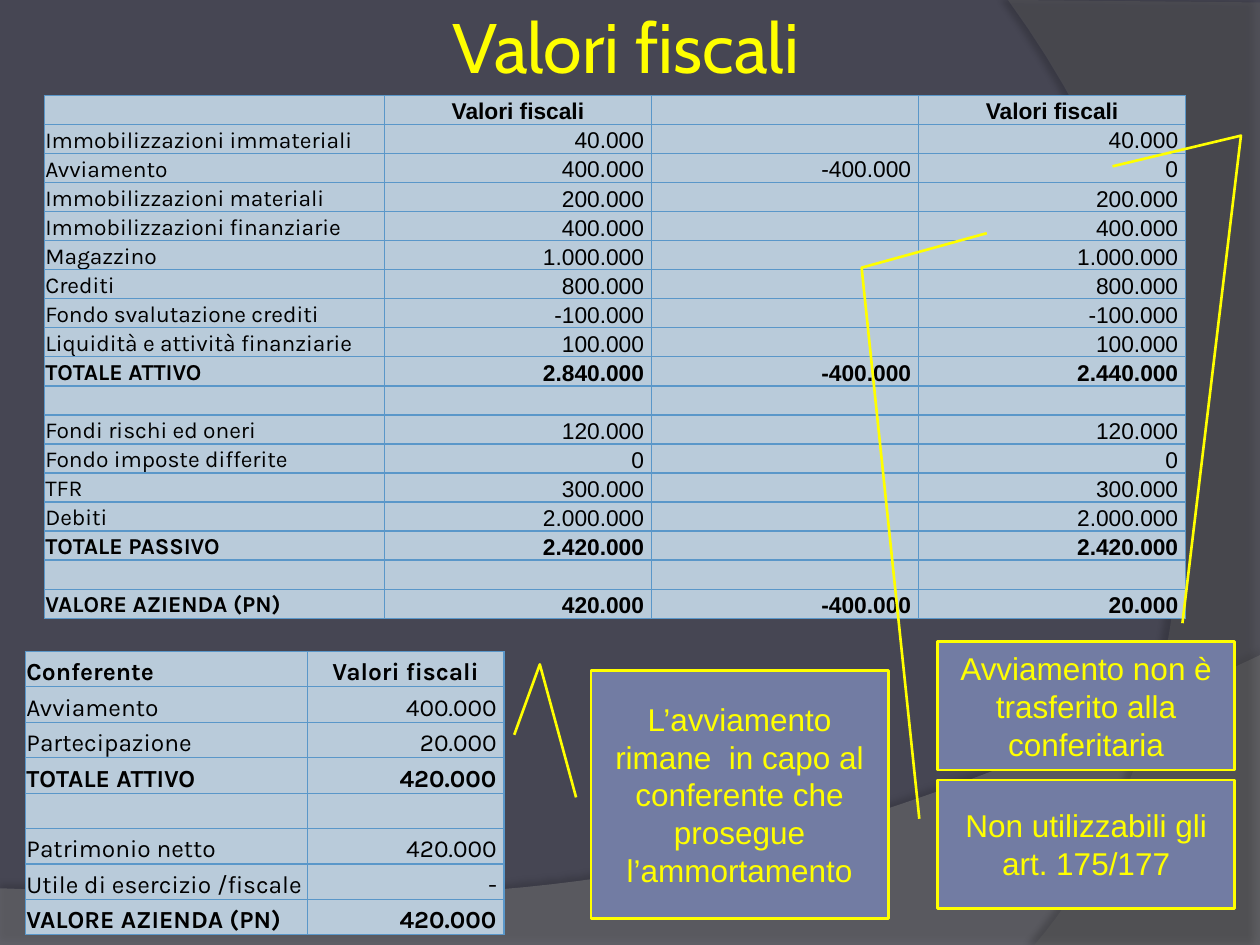
"""Build the slide on tax values of a business contribution."""
import collections

import lxml.etree
import pptx
import pptx.dml.color
import pptx.enum.shapes
import pptx.enum.text
import pptx.oxml
import pptx.oxml.ns
import pptx.util

Inches = pptx.util.Inches
Align = pptx.enum.text.PP_ALIGN
Anchor = pptx.enum.text.MSO_ANCHOR
Box = collections.namedtuple("Box", "left top width height")

YELLOW, BLACK, PANEL, CELL, RULE = "FFFF00", "000000", "727CA3", "B9CBDA", "5A97C9"
NAMESPACE = 'xmlns:a="http://schemas.openxmlformats.org/drawingml/2006/main"'

BALANCE = [
    ("", "Valori fiscali", "", "Valori fiscali"),
    ("Immobilizzazioni immateriali", "40.000 ", "", "40.000 "),
    ("Avviamento", "400.000 ", "-400.000 ", "0 "),
    ("Immobilizzazioni materiali", "200.000 ", "", "200.000 "),
    ("Immobilizzazioni finanziarie", "400.000 ", "", "400.000 "),
    ("Magazzino", "1.000.000 ", "", "1.000.000 "),
    ("Crediti", "800.000 ", "", "800.000 "),
    ("Fondo svalutazione crediti", "-100.000 ", "", "-100.000 "),
    ("Liquidità e attività finanziarie", "100.000 ", "", "100.000 "),
    ("TOTALE ATTIVO", "2.840.000 ", "-400.000 ", "2.440.000 "),
    ("", "", "", ""),
    ("Fondi rischi ed oneri", "120.000 ", "", "120.000 "),
    ("Fondo imposte differite", "0 ", "", "0 "),
    ("TFR", "300.000 ", "", "300.000 "),
    ("Debiti", "2.000.000 ", "", "2.000.000 "),
    ("TOTALE PASSIVO", "2.420.000 ", "", "2.420.000 "),
    ("", "", "", ""),
    ("VALORE AZIENDA (PN)", "420.000 ", "-400.000 ", "20.000 "),
]
CONTRIBUTOR = [
    ("Conferente", "Valori fiscali"),
    ("Avviamento", " 400.000 "),
    ("Partecipazione", "20.000 "),
    ("TOTALE ATTIVO", " 420.000 "),
    ("", ""),
    ("Patrimonio netto", "420.000 "),
    ("Utile di esercizio /fiscale", " - "),
    ("VALORE AZIENDA (PN)", "420.000 "),
]
CALLOUTS = [
    (Box(4.69, 5.32, 2.36, 1.97), (0.512, -0.05, -0.024, -0.172, 0.26, -0.258),
     "L’avviamento rimane  in capo al conferente che prosegue l’ammortamento"),
    (Box(7.44, 6.19, 2.36, 1.02), (0.302, -0.061, -3.986, -0.255, -4.254, 0.166),
     "Non utilizzabili gli art. 175/177"),
    (Box(7.44, 5.09, 2.36, 1.02), (-0.142, 0.824, -3.935, 1.021, -3.696, 0.589),
     "Avviamento non è trasferito alla conferitaria"),
]


def color(value):
    """Turn a hex string into a colour."""
    return pptx.dml.color.RGBColor.from_string(value)


def paint(target, value):
    """Fill a shape, cell or background with a solid colour."""
    target.fill.solid()
    target.fill.fore_color.rgb = color(value)


def place(box):
    """Return the lengths of a box."""
    return [Inches(side) for side in box]


def write(frame, text, align, font, size, value, bold=False):
    """Write one run into the first paragraph of a text frame."""
    para = frame.paragraphs[0]
    para.alignment = align
    span = para.add_run()
    span.text = text
    span.font.name = font
    span.font.size = pptx.util.Pt(size)
    span.font.bold = bold
    span.font.color.rgb = color(value)


def curve(start, first, second, end, steps=40):
    """Return points along a cubic curve, without its start."""
    points = []
    for step in range(1, steps + 1):
        t = step / steps
        weights = ((1 - t) ** 3, 3 * t * (1 - t) ** 2, 3 * t * t * (1 - t), t ** 3)
        points.append(tuple(sum(w * p[axis] for w, p in zip(weights, (start, first, second, end)))
                            for axis in (0, 1)))
    return points


def add_wave(page, box, points, value, opacity, shade, distance, direction):
    """Draw a translucent background wave with points relative to its box."""
    spots = [(Inches(box.left + x), Inches(box.top + y)) for x, y in points]
    builder = page.shapes.build_freeform(*spots[0])
    builder.add_line_segments(spots[1:], close=True)
    wave = builder.convert_to_shape()
    paint(wave, value)
    wave.line.fill.background()
    tint = wave._element.spPr.find(".//" + pptx.oxml.ns.qn("a:srgbClr"))
    lxml.etree.SubElement(tint, pptx.oxml.ns.qn("a:alpha"), val=str(opacity * 1000))
    wave._element.spPr.append(pptx.oxml.parse_xml(
        f'<a:effectLst {NAMESPACE}><a:outerShdw blurRad="{pptx.util.Pt(4)}" '
        f'dist="{pptx.util.Pt(distance)}" dir="{direction * 60000}" rotWithShape="0">'
        f'<a:srgbClr val="{BLACK}"><a:alpha val="{shade * 1000}"/></a:srgbClr>'
        '</a:outerShdw></a:effectLst>'))


def add_backdrop(page):
    """Draw the background colour and its two waves."""
    paint(page.background, "464653")
    floor = [(0, 1.85), (0, 2.3), (10, 2.3), (10, 0)]
    floor += curve((10, 0), (5.59, 2.09), (3.91, 1.99), (0, 1.85))
    add_wave(page, Box(0, 5.2, 10, 2.3), floor, "7F7F7F", 45, 35, 3.5, 270)
    side = [(2, 0.02), (2, 7.5), (0.21, 7.5)]
    side += curve((0.21, 7.5), (1.35, 6.19), (2.18, 3), (0, 0))
    add_wave(page, Box(8, 0, 2, 7.5), side, "5E5E5E", 40, 45, 4, 180)


def add_title(page, box, text):
    """Place the centred title."""
    frame = page.shapes.add_textbox(*place(box)).text_frame
    frame.word_wrap = True
    frame.vertical_anchor = Anchor.MIDDLE
    frame.margin_left = frame.margin_right = Inches(0.05)
    write(frame, text, Align.CENTER, "Cabin", 40, YELLOW)


def style_cell(cell, size):
    """Set the fill, margins, borders and empty-line size of a cell."""
    paint(cell, CELL)
    cell.vertical_anchor = Anchor.BOTTOM
    cell.margin_left = cell.margin_right = cell.margin_top = Inches(0.01)
    cell.margin_bottom = 0
    properties = cell._tc.get_or_add_tcPr()
    for index, side in enumerate("LRTB"):
        properties.insert(index, pptx.oxml.parse_xml(
            f'<a:ln{side} {NAMESPACE} w="{pptx.util.Pt(0.75)}"><a:solidFill>'
            f'<a:srgbClr val="{RULE}"/></a:solidFill></a:ln{side}>'))
    if not cell.text_frame.text:
        lxml.etree.SubElement(cell.text_frame.paragraphs[0]._p,
                              pptx.oxml.ns.qn("a:endParaRPr"), sz=str(size * 100))


def add_values(page, box, widths, rows, size, number_font):
    """Place a table of labels and right-aligned amounts."""
    table = page.shapes.add_table(len(rows), len(widths), *place(box)).table
    table.first_row = table.horz_banding = False
    for column, width in zip(table.columns, widths):
        column.width = Inches(width)
    for r, row in enumerate(rows):
        table.rows[r].height = Inches(box.height / len(rows))
        bold = r == 0 or row[0].startswith(("TOTALE", "VALORE"))
        for c, text in enumerate(row):
            cell = table.cell(r, c)
            if text:
                align = Align.LEFT if c == 0 else Align.CENTER if r == 0 else Align.RIGHT
                font = "Karla" if c == 0 else number_font
                write(cell.text_frame, text, align, font, size, BLACK, bold)
            style_cell(cell, size)


def add_callout(page, box, bends, text):
    """Place a note with a bent pointer line."""
    note = page.shapes.add_shape(pptx.enum.shapes.MSO_SHAPE.LINE_CALLOUT_2, *place(box))
    for index, bend in enumerate(bends):
        note.adjustments[index] = bend
    note.shadow.inherit = False
    paint(note, PANEL)
    note.line.color.rgb = color(YELLOW)
    note.line.width = pptx.util.Pt(1.5)
    note.text_frame.word_wrap = True
    note.text_frame.vertical_anchor = Anchor.MIDDLE
    write(note.text_frame, text, Align.CENTER, "Arial", 18, YELLOW)


def main():
    """Build and save the deck."""
    deck = pptx.Presentation()
    deck.slide_width, deck.slide_height = Inches(10), Inches(7.5)
    page = deck.slides.add_slide(deck.slide_layouts[6])
    add_backdrop(page)
    add_title(page, Box(0.2, 0.05, 9.53, 0.63), "Valori fiscali")
    add_values(page, Box(0.2, 5.17, 3.8, 2.25), (2.24, 1.56), CONTRIBUTOR, 14, "Karla")
    contributor_note, *balance_notes = CALLOUTS
    add_callout(page, *contributor_note)
    add_values(page, Box(0.35, 0.76, 9.06, 4.15), (2.7, 2.12, 2.12, 2.12), BALANCE, 13, "Arial")
    for note in balance_notes:
        add_callout(page, *note)
    deck.save("out.pptx")


if __name__ == "__main__":
    main()
